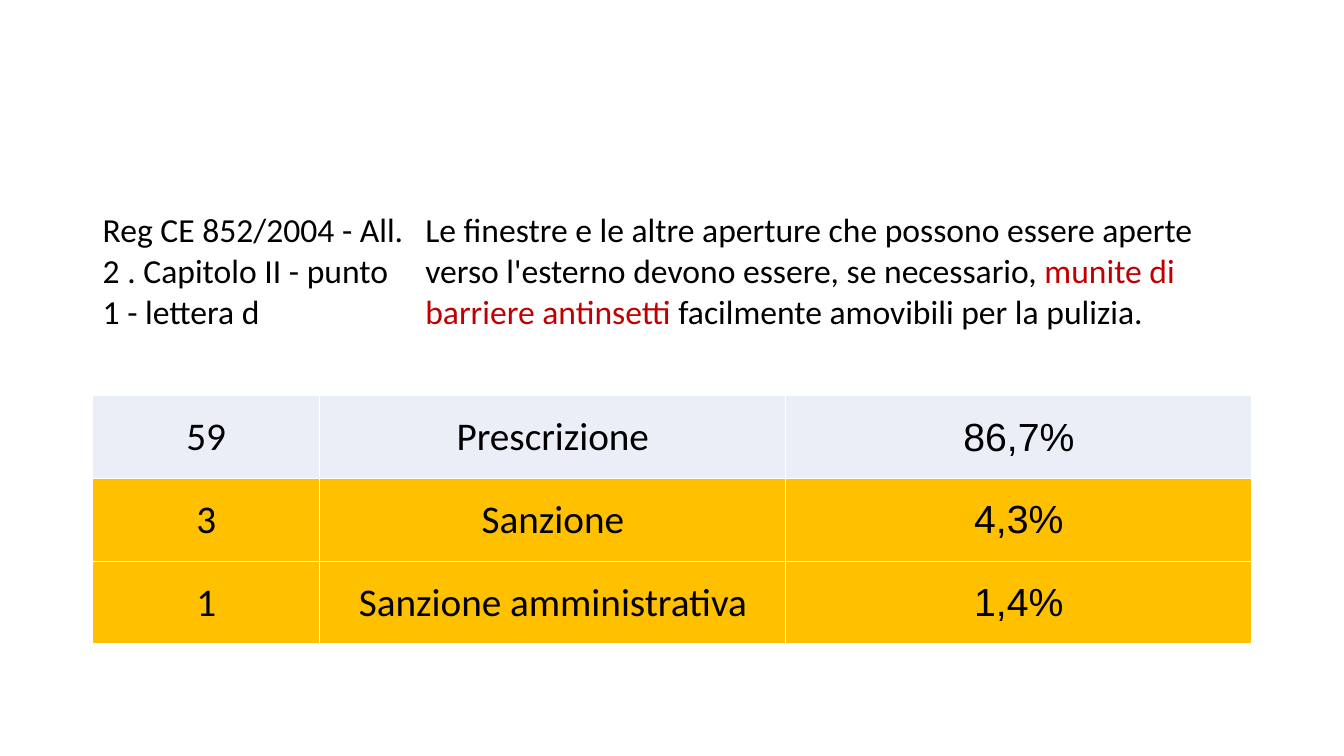
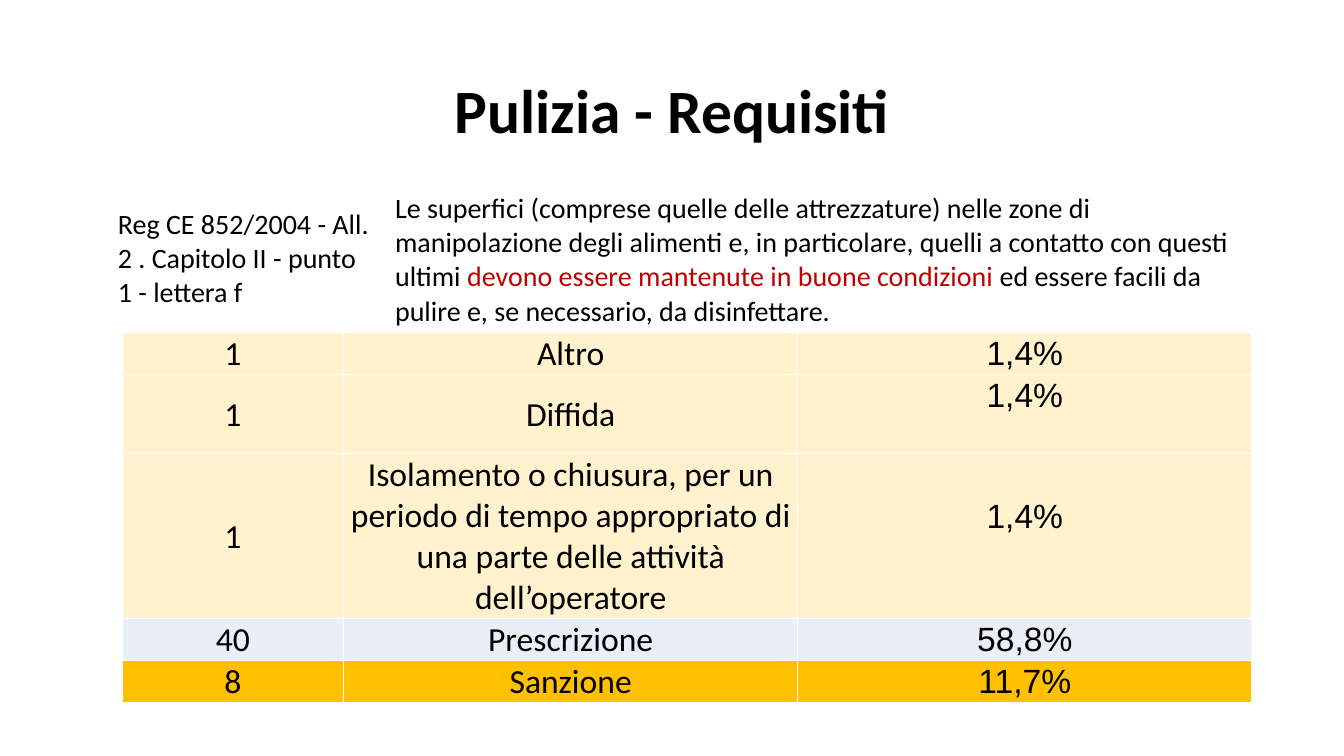
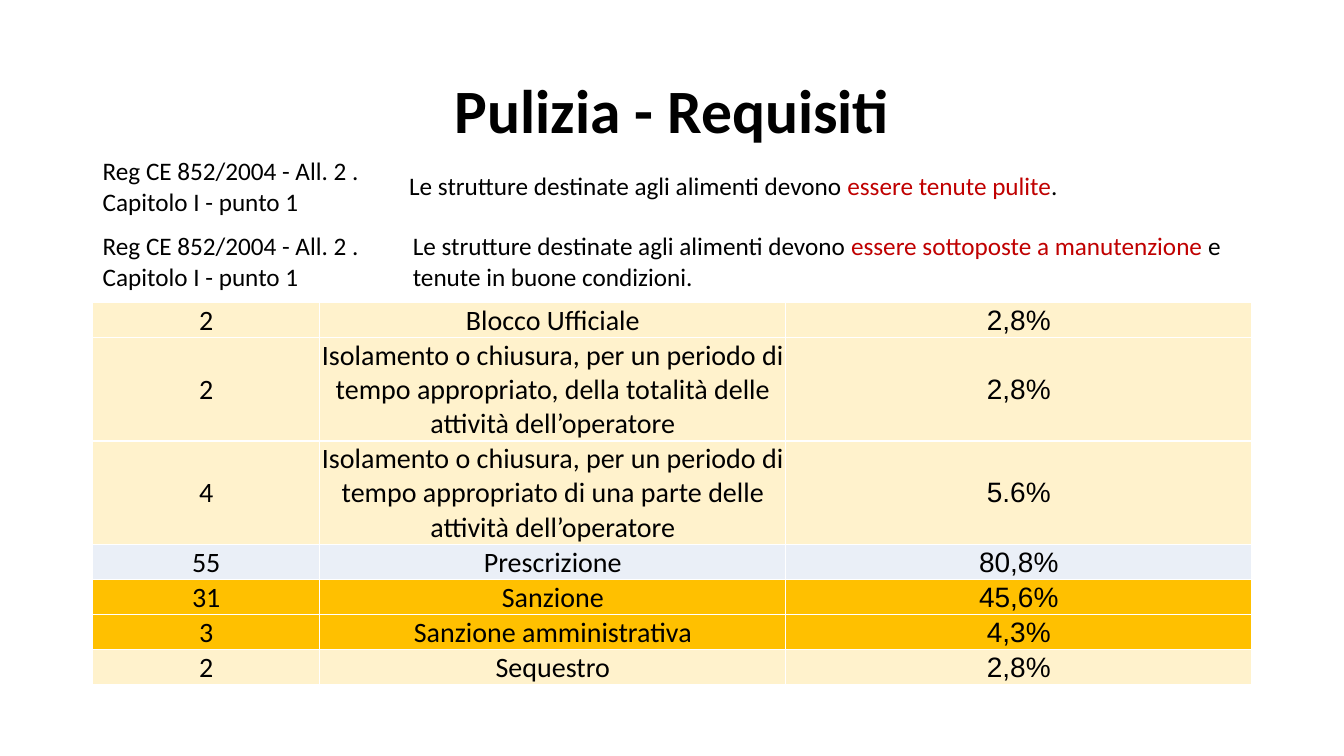
from dataclasses import dataclass
from typing import Any, NamedTuple

from lxml.etree import SubElement
from pptx import Presentation
from pptx.dml.color import RGBColor
from pptx.enum.text import MSO_ANCHOR as Anchor, PP_ALIGN as Align
from pptx.oxml.ns import qn
from pptx.util import Pt


@dataclass(frozen=True)
class Theme:
    black: str = "000000"
    red: str = "C00000"
    white: str = "FFFFFF"
    cream: str = "FFF2CC"
    blue: str = "EAEFF7"
    amber: str = "FFC000"
    text_font: str = "Calibri"
    share_font: str = "Arial"
    title_size: float = 44
    large: float = 28
    medium: float = 24
    small: float = 20
    tiny: float = 18
    left: float = 66.2
    width: float = 828
    inset: float = 0.7
    line_height: float = 1.22


THEME = Theme()
COLUMN_SHARES = (0.196, 0.402, 0.402)
CELL_FORMAT = {
    "vertical_anchor": Anchor.MIDDLE,
    "margin_left": Pt(THEME.inset),
    "margin_right": Pt(THEME.inset),
    "margin_top": Pt(THEME.inset),
    "margin_bottom": 0,
}
TITLE_FORMAT = {"word_wrap": True, "vertical_anchor": Anchor.MIDDLE}
PLAIN_TABLE = {"first_row": False, "horz_banding": False}


class Span(NamedTuple):
    text: str
    color: str = THEME.black


class Rule(NamedTuple):
    source: str
    spans: tuple[Span, ...]
    left: float
    top: float
    height: float
    source_width: float
    size: float


class Outcome(NamedTuple):
    count: str
    measure: str
    share: str
    fill: str = THEME.cream
    lines: int = 1
    height: float = 0
    lift: float = 0


class Outcomes(NamedTuple):
    left: float
    top: float
    width: float
    size: float
    rows: tuple[Outcome, ...]


class Sheet(NamedTuple):
    title: str
    rules: tuple[Rule, ...]
    outcomes: Outcomes


SHEETS = (
    Sheet(
        "",
        (
            Rule(
                "Reg CE 852/2004 - All. 2 . Capitolo II - punto 1 - lettera d",
                (
                    Span("Le finestre e le altre aperture che possono essere aperte "
                         "verso l'esterno devono essere, se necessario, "),
                    Span("munite di barriere antinsetti", THEME.red),
                    Span(" facilmente amovibili per la pulizia."),
                ),
                THEME.left, 147, 93.6, 230.4, THEME.medium,
            ),
        ),
        Outcomes(THEME.left, 282.5, THEME.width, THEME.large, (
            Outcome("59", "Prescrizione", "86,7%", THEME.blue, height=59.2),
            Outcome("3", "Sanzione", "4,3%", THEME.amber, height=59.2),
            Outcome("1", "Sanzione amministrativa", "1,4%", THEME.amber, height=59.2),
        )),
    ),
    Sheet(
        "Pulizia - Requisiti",
        (
            Rule(
                "Reg CE 852/2004 - All. 2 . Capitolo II - punto 1 - lettera f",
                (
                    Span("Le superfici (comprese quelle delle attrezzature) nelle zone di "
                         "manipolazione degli alimenti e, in particolare, quelli a contatto "
                         "con questi ultimi "),
                    Span("devono essere mantenute in buone condizioni ", THEME.red),
                    Span("ed essere facili da pulire e, se necessario, da disinfettare."),
                ),
                77, 133.2, 103, 198, THEME.small,
            ),
        ),
        Outcomes(87.3, 237.6, 807, THEME.medium, (
            Outcome("1", "Altro", "1,4%"),
            Outcome("1", "Diffida", "1,4%", height=54, lift=27),
            Outcome("1", "Isolamento o chiusura, per un periodo di tempo appropriato "
                    "di una parte delle attività dell’operatore", "1,4%", lines=4, lift=28),
            Outcome("40", "Prescrizione", "58,8%", THEME.blue),
            Outcome("8", "Sanzione", "11,7%", THEME.amber),
        )),
    ),
    Sheet(
        "Pulizia - Requisiti",
        (
            Rule(
                "Reg CE 852/2004 - All. 2 . Capitolo I - punto 1",
                (
                    Span("Le strutture destinate agli alimenti devono "),
                    Span("essere tenute pulite", THEME.red),
                    Span("."),
                ),
                THEME.left, 108, 50.4, 218.9, THEME.tiny,
            ),
            Rule(
                "Reg CE 852/2004 - All. 2 . Capitolo I - punto 1",
                (
                    Span("Le strutture destinate agli alimenti devono "),
                    Span("essere sottoposte a manutenzione ", THEME.red),
                    Span("e tenute in buone condizioni."),
                ),
                THEME.left, 162, 50.4, 221.5, THEME.tiny,
            ),
        ),
        Outcomes(THEME.left, 216, THEME.width, THEME.small, (
            Outcome("2", "Blocco Ufficiale", "2,8%"),
            Outcome("2", "Isolamento o chiusura, per un periodo di tempo appropriato, "
                    "della totalità delle attività dell’operatore", "2,8%", lines=3),
            Outcome("4", "Isolamento o chiusura, per un periodo di tempo appropriato "
                    "di una parte delle attività dell’operatore", "5.6%", lines=3),
            Outcome("55", "Prescrizione", "80,8%", THEME.blue),
            Outcome("31", "Sanzione", "45,6%", THEME.amber),
            Outcome("3", "Sanzione amministrativa", "4,3%", THEME.amber),
            Outcome("2", "Sequestro", "2,8%"),
        )),
    ),
)


def apply_format(target: Any, values: dict[str, Any]) -> None:
    for name, value in values.items():
        setattr(target, name, value)


def write(para: Any, spans: tuple[Span, ...], size: float,
          font: str = THEME.text_font, bold: bool = False) -> None:
    for span in spans:
        run = para.add_run()
        run.text = span.text
        apply_format(run.font, {"name": font, "size": Pt(size), "bold": bold})
        run.font.color.rgb = RGBColor.from_string(span.color)


def add_borders(cell: Any) -> None:
    properties = cell._tc.get_or_add_tcPr()
    for index, side in enumerate(("a:lnL", "a:lnR", "a:lnT", "a:lnB")):
        line = properties.makeelement(qn(side), {"w": str(Pt(1))})
        properties.insert(index, line)
        fill = SubElement(line, qn("a:solidFill"))
        SubElement(fill, qn("a:srgbClr"), {"val": THEME.white})


def add_plain_table(page: Any, left: float, top: float,
                    widths: list[float], heights: list[float]) -> Any:
    frame = page.shapes.add_table(
        len(heights), len(widths), Pt(left), Pt(top), Pt(sum(widths)), Pt(sum(heights)))
    table = frame.table
    apply_format(table, PLAIN_TABLE)
    for column, width in zip(table.columns, widths):
        column.width = Pt(width)
    for row, height in zip(table.rows, heights):
        row.height = Pt(height)
    return table


def draw_title(page: Any, title: str) -> None:
    box = page.shapes.add_textbox(Pt(THEME.left), Pt(28.8), Pt(THEME.width), Pt(104.4))
    apply_format(box.text_frame, TITLE_FORMAT)
    para = box.text_frame.paragraphs[0]
    apply_format(para, {"alignment": Align.CENTER, "line_spacing": 0.9})
    write(para, (Span(title),), THEME.title_size, bold=True)


def draw_rule(page: Any, rule: Rule) -> None:
    widths = [rule.source_width, THEME.width - rule.source_width]
    table = add_plain_table(page, rule.left, rule.top, widths, [rule.height])
    for cell, spans in zip(table.rows[0].cells, ((Span(rule.source),), rule.spans)):
        cell.fill.background()
        cell.vertical_anchor = Anchor.MIDDLE
        write(cell.text_frame.paragraphs[0], spans, rule.size)


def draw_outcomes(page: Any, outcomes: Outcomes) -> None:
    widths = [outcomes.width * share for share in COLUMN_SHARES]
    line_height = outcomes.size * THEME.line_height
    heights = [row.height or row.lines * line_height + THEME.inset for row in outcomes.rows]
    table = add_plain_table(page, outcomes.left, outcomes.top, widths, heights)
    fonts = (THEME.text_font, THEME.text_font, THEME.share_font)
    for row, outcome in zip(table.rows, outcomes.rows):
        texts = (outcome.count, outcome.measure, outcome.share)
        for cell, text, font in zip(row.cells, texts, fonts):
            apply_format(cell, CELL_FORMAT)
            cell.fill.solid()
            cell.fill.fore_color.rgb = RGBColor.from_string(outcome.fill)
            add_borders(cell)
            para = cell.text_frame.paragraphs[0]
            para.alignment = Align.CENTER
            write(para, (Span(text),), outcomes.size, font)
        row.cells[2].margin_bottom = Pt(outcome.lift)


def main() -> None:
    deck = Presentation()
    apply_format(deck, {"slide_width": Pt(960), "slide_height": Pt(540)})
    for sheet in SHEETS:
        page = deck.slides.add_slide(deck.slide_layouts[6])
        if sheet.title:
            draw_title(page, sheet.title)
        for rule in sheet.rules:
            draw_rule(page, rule)
        draw_outcomes(page, sheet.outcomes)
    deck.save("out.pptx")


if __name__ == "__main__":
    main()
